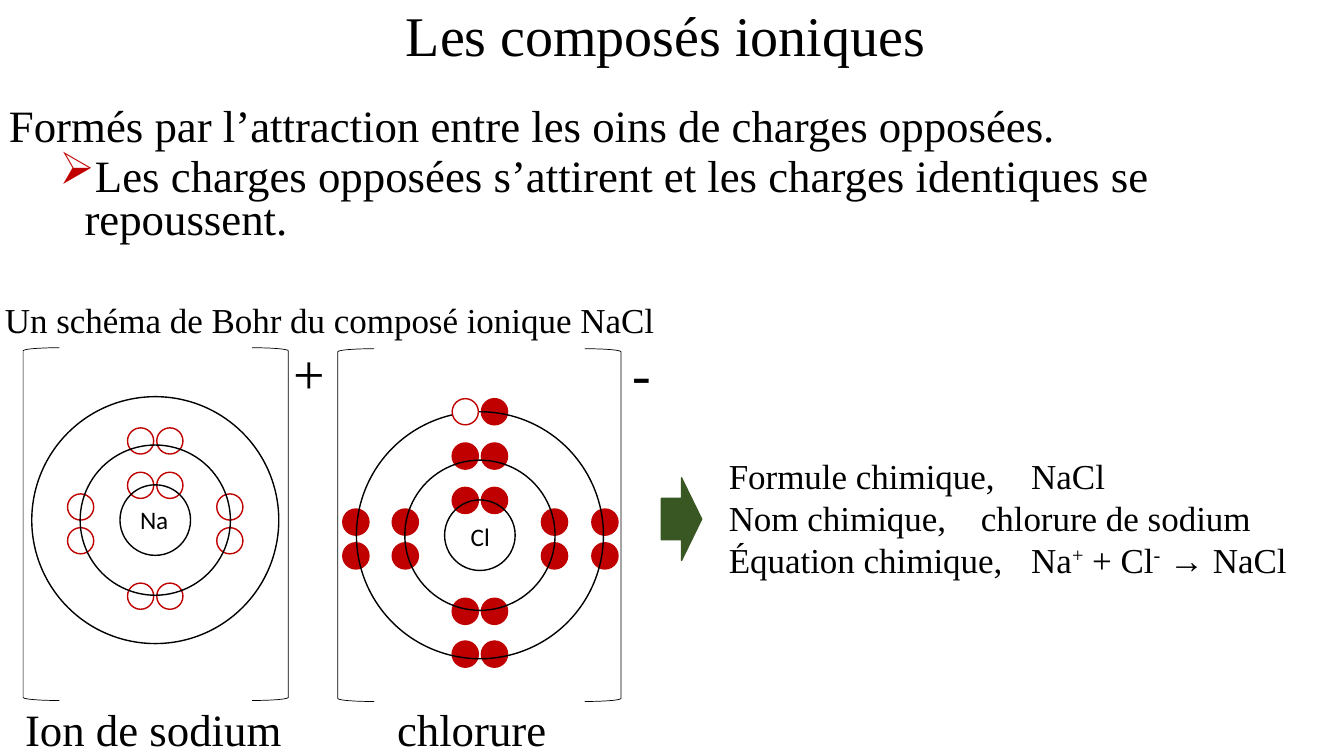
from dataclasses import dataclass

from lxml import etree
from pptx import Presentation
from pptx import util as u
from pptx.dml.color import RGBColor
from pptx.enum import shapes, text
from pptx.oxml.ns import qn


@dataclass(frozen=True)
class Theme:
    ink: str = "000000"
    paper: str = "FFFFFF"
    electron: str = "C00000"
    arrow: str = "385723"
    serif: str = "Times New Roman"
    sans: str = "Calibri"
    title: int = 40
    body: int = 32
    detail: int = 25
    symbol: int = 18


theme = Theme()
presentation = Presentation()
presentation.slide_width = u.Inches(13.33)
presentation.slide_height = u.Inches(7.5)
slide = presentation.slides.add_slide(presentation.slide_layouts[6])


def add_text(content, box, size, font=theme.serif, wrap=False, align=text.PP_ALIGN.LEFT,
             anchor=text.MSO_ANCHOR.TOP, spacing=1.0):
    """Add one paragraph per line; ^ switches superscript on and off."""
    frame = slide.shapes.add_textbox(*map(u.Inches, box)).text_frame
    frame.word_wrap = wrap
    frame.vertical_anchor = anchor
    for index, line in enumerate(content.split("\n")):
        paragraph = frame.add_paragraph() if index else frame.paragraphs[0]
        paragraph.alignment = align
        paragraph.line_spacing = spacing
        for part, words in enumerate(line.split("^")):
            run = paragraph.add_run()
            run.text = words
            run.font.name = font
            run.font.size = u.Pt(size)
            run.font.color.rgb = RGBColor.from_string(theme.ink)
            if part % 2:
                run.font._element.set("baseline", "30000")
    return frame


def add_figure(kind, box, line, fill=None, weight=1):
    shape = slide.shapes.add_shape(kind, *map(u.Inches, box))
    shape.shadow.inherit = False
    shape.line.color.rgb = RGBColor.from_string(line)
    shape.line.width = u.Pt(weight)
    if fill:
        shape.fill.solid()
        shape.fill.fore_color.rgb = RGBColor.from_string(fill)
    else:
        shape.fill.background()
    return shape


# Title and statement
add_text("Les composés ioniques", (0.85, 0.03, 11.5, 0.71), theme.title, wrap=True,
         align=text.PP_ALIGN.CENTER, anchor=text.MSO_ANCHOR.MIDDLE, spacing=0.9)
statement = add_text(
    "Formés par l’attraction entre les oins de charges opposées.\n"
    "Les charges opposées s’attirent et les charges identiques se repoussent.",
    (-0.01, 1.02, 12.43, 1.46), theme.body, wrap=True, spacing=0.8)

# Red arrow bullet on the second statement
bullet = statement.paragraphs[1]
bullet.level = 1
bullet.space_before = u.Pt(5)
properties = bullet._p.get_or_add_pPr()
properties.set("marL", str(u.Inches(0.75)))
properties.set("indent", str(u.Inches(-0.25)))
bullet_color = etree.SubElement(properties, qn("a:buClr"))
etree.SubElement(bullet_color, qn("a:srgbClr"), val=theme.electron)
etree.SubElement(properties, qn("a:buChar"), char="➢")

# Electron places, measured from the nucleus
pair, upper, lower = 0.145, -0.13, 0.205
inner_shell = [(x, -0.345) for x in (-pair, pair)]
middle_shell = [(x, y) for x in (-pair, pair) for y in (-0.785, 0.755)]
middle_shell += [(x, y) for x in (-0.74, 0.74) for y in (upper, lower)]
outer_shell = [(pair, -1.225), (-pair, 1.18), (pair, 1.18)]
outer_shell += [(x, y) for x in (-1.23, 1.24) for y in (upper, lower)]
transferred = (-pair, -1.225)
two_shells = inner_shell + middle_shell

# Symbol, nucleus centre, electrons and their fill, symbol box, brackets
ions = [
    ("Na", 1.54, 5.16, two_shells, theme.paper, (1.29, 4.95, 0.49, 0.4), (0.23, 2.5, 3.45)),
    ("Cl", 4.76, 5.31, two_shells + outer_shell, theme.electron,
     (4.57, 5.12, 0.39, 0.4), (3.35, 5.8, 3.46)),
]
electron_size = 0.26
for symbol, center_x, center_y, electrons, fill, symbol_box, brackets in ions:
    add_text(symbol, symbol_box, theme.symbol, font=theme.sans)
    layers = [(x, y, electron_size, theme.electron, fill) for x, y in electrons]
    layers += [(0, 0, diameter, theme.ink, None) for diameter in (0.7, 1.49, 2.45)]
    if symbol == "Cl":
        layers.append((*transferred, electron_size, theme.electron, theme.paper))
    for x, y, size, line, inside in layers:
        add_figure(shapes.MSO_SHAPE.OVAL,
                   (center_x + x - size / 2, center_y + y - size / 2, size, size), line, inside)
    left, right, top = brackets
    for kind, x in ((shapes.MSO_SHAPE.LEFT_BRACKET, left), (shapes.MSO_SHAPE.RIGHT_BRACKET, right)):
        add_figure(kind, (x, top, 0.36, 3.5), theme.ink, weight=0.5)

# Charges, ion names and diagram caption
labels = [
    ("+", (2.81, 3.31, 0.52, 0.77), theme.title),
    ("-", (6.17, 3.31, 0.39, 0.77), theme.title),
    ("Ion de sodium", (0.15, 6.91, 2.77, 0.64), theme.body),
    ("chlorure", (3.84, 6.91, 1.7, 0.64), theme.body),
    ("Un schéma de Bohr du composé ionique NaCl", (-0.05, 2.91, 6.72, 0.52), theme.detail),
]
for label, box, size in labels:
    add_text(label, box, size)

# Arrow and resulting compound
add_figure(shapes.MSO_SHAPE.RIGHT_ARROW, (6.56, 4.74, 0.4, 0.82), theme.arrow, theme.arrow)
add_text("Formule chimique,\tNaCl\n"
         "Nom chimique,\tchlorure de sodium\n"
         "Équation chimique,\tNa^+^ + Cl^-^ → NaCl",
         (7.13, 4.46, 5.94, 1.36), theme.detail)

presentation.save("out.pptx")
